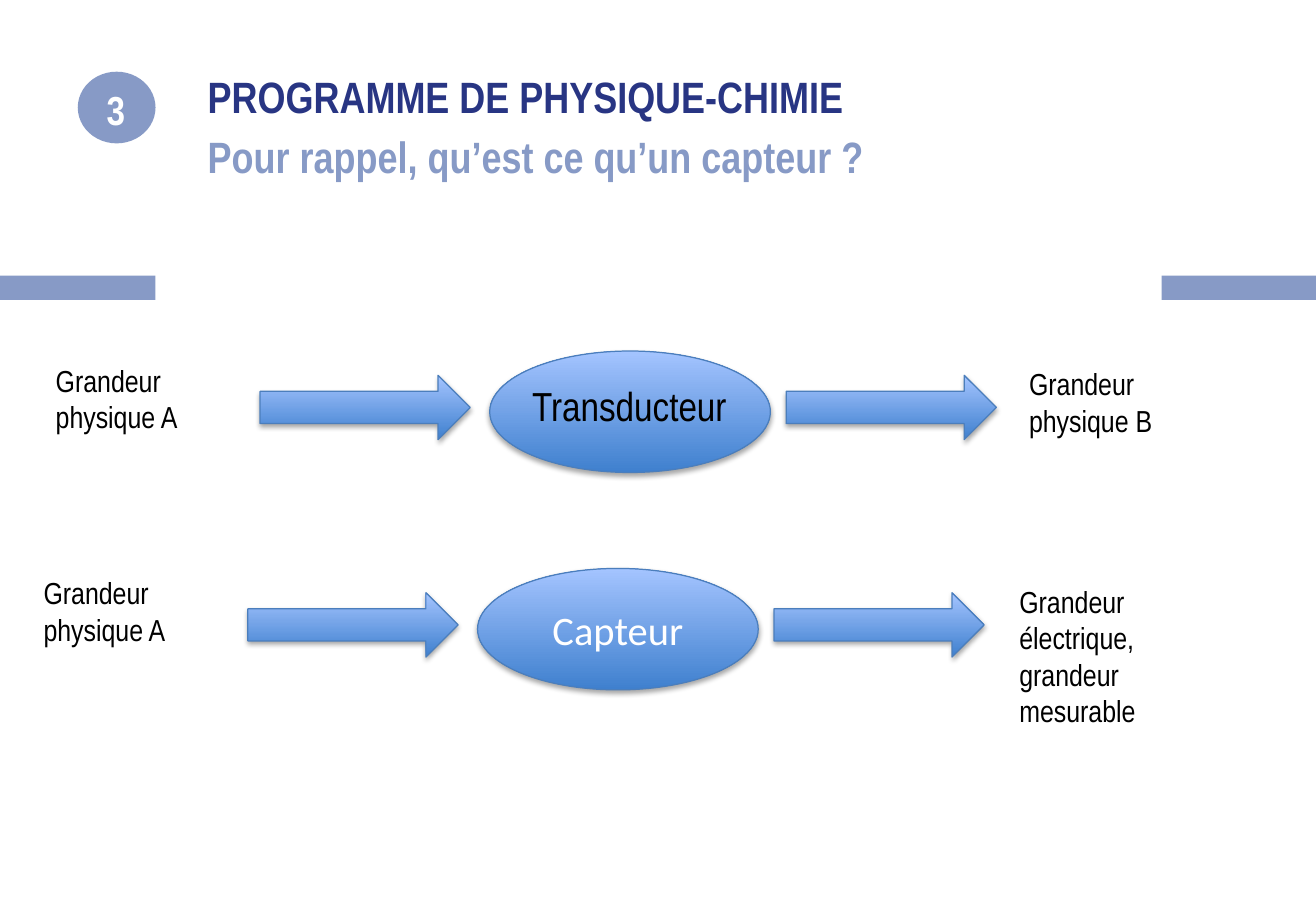
import dataclasses

import lxml.etree
import pptx
import pptx.dml.color
import pptx.enum.shapes
import pptx.enum.text
import pptx.oxml.ns
import pptx.util

SHAPES = pptx.enum.shapes.MSO_SHAPE
ANCHOR = pptx.enum.text.MSO_ANCHOR
ALIGN = pptx.enum.text.PP_ALIGN
Inches = pptx.util.Inches


@dataclasses.dataclass(frozen=True)
class Theme:
    navy: str = "283583"
    accent: str = "879AC6"
    black: str = "000000"
    white: str = "FFFFFF"
    gradient: tuple = ("3F80CE", "A4C4FF")
    outline: str = "4B7EBC"
    narrow: str = "Arial Narrow"
    rounded: str = "Calibri"
    heading_size: int = 26
    node_size: int = 24
    label_size: int = 18


def rgb(value):
    return pptx.dml.color.RGBColor.from_string(value)


class SlideBuilder:
    def __init__(self, slide, theme):
        self.slide = slide
        self.theme = theme

    def add_text_run(self, frame, text, size, color, font=None, bold=False,
                     align=ALIGN.LEFT):
        paragraph = frame.paragraphs[0]
        paragraph.alignment = align
        run = paragraph.add_run()
        run.text = text
        run.font.name = font or self.theme.narrow
        run.font.size = pptx.util.Pt(size)
        run.font.bold = bold
        run.font.color.rgb = rgb(color)

    def text_box(self, box, text, size, color, bold=False, inset=True,
                 anchor=ANCHOR.TOP):
        frame = self.slide.shapes.add_textbox(*map(Inches, box)).text_frame
        frame.word_wrap = True
        frame.vertical_anchor = anchor
        if not inset:
            frame.margin_left = frame.margin_right = 0
            frame.margin_top = frame.margin_bottom = 0
        self.add_text_run(frame, text, size, color, bold=bold)

    def flat_shape(self, kind, box):
        shape = self.slide.shapes.add_shape(kind, *map(Inches, box))
        shape.shadow.inherit = False
        shape.fill.solid()
        shape.fill.fore_color.rgb = rgb(self.theme.accent)
        shape.line.fill.background()

    def glossy_shape(self, group, kind, box):
        shape = group.shapes.add_shape(kind, *map(Inches, box))
        shape.fill.gradient()
        shape.fill.gradient_angle = 90
        for stop, color in zip(shape.fill.gradient_stops, self.theme.gradient):
            stop.color.rgb = rgb(color)
        shape.line.color.rgb = rgb(self.theme.outline)
        shape.line.width = pptx.util.Pt(0.75)
        self.drop_shadow(shape)
        return shape

    def drop_shadow(self, shape):
        shape.shadow.inherit = False
        qn = pptx.oxml.ns.qn
        effects = shape._element.spPr.find(qn("a:effectLst"))
        shadow = lxml.etree.SubElement(
            effects, qn("a:outerShdw"), blurRad=str(int(pptx.util.Pt(3.1))),
            dist=str(int(pptx.util.Pt(1.8))), dir="5400000", rotWithShape="0")
        color = lxml.etree.SubElement(shadow, qn("a:srgbClr"), val=self.theme.black)
        lxml.etree.SubElement(color, qn("a:alpha"), val="35000")

    def chain(self, left, top):
        """Ellipse with an incoming and an outgoing arrow; returns the ellipse."""
        group = self.slide.shapes.add_group_shape()
        ellipse = self.glossy_shape(group, SHAPES.OVAL, (left, top, 2.31, 1))
        for offset in (2.44, -1.89):
            self.glossy_shape(group, SHAPES.RIGHT_ARROW,
                              (left + offset, top + 0.2, 1.73, 0.53))
        return ellipse

    def label(self, left, top, height, text):
        self.text_box((left, top, 1.79, height), text,
                      self.theme.label_size, self.theme.black)


def main():
    presentation = pptx.Presentation()
    presentation.slide_width = Inches(10.83)
    presentation.slide_height = Inches(7.5)
    theme = Theme()
    slide = presentation.slides.add_slide(presentation.slide_layouts[6])
    builder = SlideBuilder(slide, theme)

    # Number badge and side bars
    builder.flat_shape(SHAPES.OVAL, (0.64, 0.59, 0.64, 0.59))
    for left in (0, 9.56):
        builder.flat_shape(SHAPES.RECTANGLE, (left, 2.27, 1.28, 0.2))
    builder.text_box((0.78, 0.65, 0.63, 0.5), "3", theme.node_size, theme.white,
                     bold=True)

    # Headings
    builder.text_box((1.71, 0.57, 7.4, 0.44), "PROGRAMME DE PHYSIQUE-CHIMIE",
                     theme.heading_size, theme.navy, bold=True, inset=False,
                     anchor=ANCHOR.MIDDLE)
    builder.text_box((1.71, 1.07, 7.4, 0.4), "Pour rappel, qu’est ce qu’un capteur ?",
                     theme.heading_size, theme.accent, bold=True, inset=False)

    # Transducer chain
    builder.chain(4.03, 2.89)
    builder.text_box((4.28, 3.09, 1.85, 0.5), "Transducteur", theme.node_size,
                     theme.black)
    builder.label(0.36, 2.93, 0.71, "Grandeur physique A")
    builder.label(8.37, 2.96, 0.71, "Grandeur physique B")

    # Sensor chain
    sensor = builder.chain(3.93, 4.68)
    sensor.text_frame.vertical_anchor = ANCHOR.MIDDLE
    builder.add_text_run(sensor.text_frame, "Capteur", theme.node_size, theme.white,
                         font=theme.rounded, align=ALIGN.CENTER)
    builder.label(0.26, 4.68, 0.71, "Grandeur physique A")
    builder.label(8.29, 4.75, 1.31, "Grandeur électrique, grandeur mesurable")

    presentation.save("out.pptx")


if __name__ == "__main__":
    main()
